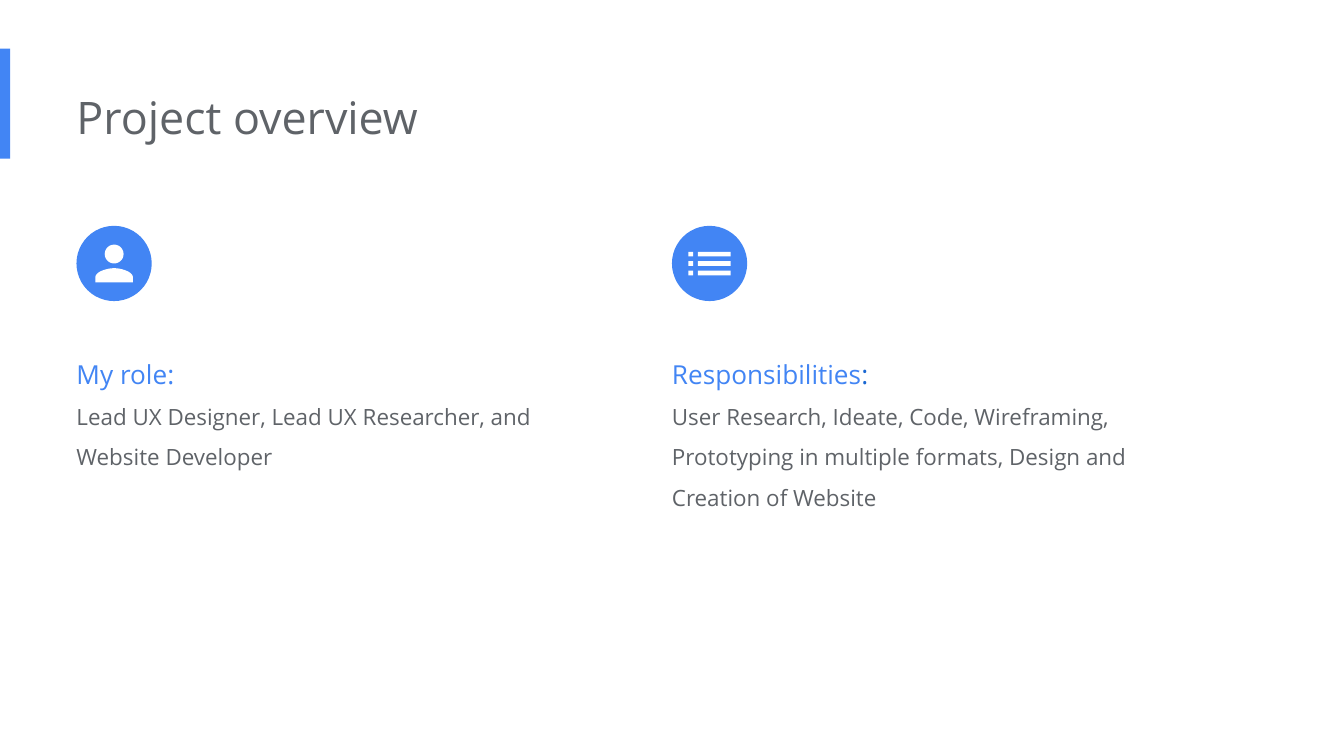
"""Build the project overview slide with a role and a responsibilities column."""
import math
from dataclasses import dataclass

import pptx
import pptx.dml.color
import pptx.enum.shapes
import pptx.enum.text
import pptx.util

Pt = pptx.util.Pt
Color = pptx.dml.color.RGBColor
Kind = pptx.enum.shapes.MSO_SHAPE
Path = list[tuple[float, float]]

BLUE = Color(0x42, 0x85, 0xF4)
NAVY = Color(0x19, 0x67, 0xD2)
GRAY = Color(0x5F, 0x63, 0x68)
WHITE = Color(0xFF, 0xFF, 0xFF)
FONT = "Open Sans"
LEFT, RIGHT = 41, 360
DISC, UNIT = 40.32, 1.26
DISC_TOP, BODY_TOP = 121, 176.4


@dataclass
class Span:
    text: str
    size: float
    color: Color


@dataclass
class Column:
    left: float
    high: float
    head: list[Span]
    body: Span
    icon: list[Path]


def paint(shape, color: Color) -> None:
    shape.shadow.inherit = False
    shape.fill.solid()
    shape.fill.fore_color.rgb = color
    shape.line.fill.background()


def add_solid(slide, kind, left: float, top: float, wide: float, high: float) -> None:
    shape = slide.shapes.add_shape(kind, Pt(left), Pt(top), Pt(wide), Pt(high))
    paint(shape, BLUE)


def add_text(slide, left: float, top: float, wide: float, high: float,
             lines: list[list[Span]], space: float = 1.0) -> None:
    box = slide.shapes.add_textbox(Pt(left), Pt(top), Pt(wide), Pt(high))
    frame = box.text_frame
    frame.word_wrap = True
    frame.auto_size = pptx.enum.text.MSO_AUTO_SIZE.SHAPE_TO_FIT_TEXT
    frame.margin_left = 0
    frame.margin_right = frame.margin_top = frame.margin_bottom = Pt(7.2)
    frame.text = "\n".join(line[0].text for line in lines)
    for para, line in zip(frame.paragraphs, lines):
        para.line_spacing = space
        for span in line[1:]:
            para.add_run().text = span.text
        for run, span in zip(para.runs, line):
            run.font.name = FONT
            run.font.size = Pt(span.size)
            run.font.color.rgb = span.color


def add_icon(slide, mid_x: float, mid_y: float, paths: list[Path]) -> None:
    rings = [[(Pt(mid_x + x * UNIT), Pt(mid_y + y * UNIT)) for x, y in path]
             for path in paths]
    pen = slide.shapes.build_freeform(*rings[0][0])
    for index, ring in enumerate(rings):
        if index:
            pen.move_to(*ring[0])
        pen.add_line_segments(ring[1:], close=True)
    paint(pen.convert_to_shape(), WHITE)


def rect(left: float, top: float, wide: float, high: float) -> Path:
    return [(left, top), (left + wide, top),
            (left + wide, top + high), (left, top + high)]


def curve(*knots: tuple[float, float], steps: int = 16) -> Path:
    path = []
    for step in range(steps + 1):
        t = step / steps
        parts = [math.comb(3, k) * t ** k * (1 - t) ** (3 - k) for k in range(4)]
        path.append((sum(p * x for p, (x, _) in zip(parts, knots)),
                     sum(p * y for p, (_, y) in zip(parts, knots))))
    return path


def person() -> list[Path]:
    turns = [math.tau * step / 48 for step in range(48)]
    head = [(4 * math.cos(turn), -4 + 4 * math.sin(turn)) for turn in turns]
    half = curve((0, 2), (-2.67, 2), (-8, 3.34), (-8, 6)) + [(-8, 8)]
    return [head, half + [(-x, y) for x, y in reversed(half[1:])]]


def bullets() -> list[Path]:
    return [rect(left, top, wide, 2)
            for top in (-5, -1, 3) for left, wide in ((-9, 2), (-5, 14))]


def add_column(slide, col: Column) -> None:
    add_solid(slide, Kind.OVAL, col.left, DISC_TOP, DISC, DISC)
    add_icon(slide, col.left + DISC / 2, DISC_TOP + DISC / 2, col.icon)
    add_text(slide, col.left, BODY_TOP, 271.4, col.high, [col.head, [col.body]], 1.5)


def main() -> None:
    deck = pptx.Presentation()
    deck.slide_width, deck.slide_height = Pt(720), Pt(405)
    slide = deck.slides.add_slide(deck.slide_layouts[6])
    add_solid(slide, Kind.RECTANGLE, 0, 26, 5.5, 59)
    add_text(slide, LEFT, 41, 484.6, 44, [[Span("Project overview", 24, GRAY)]])
    cols = [
        Column(LEFT, 76.3, [Span("My role:", 14, BLUE)],
               Span("Lead UX Designer, Lead UX Researcher, and Website Developer",
                    12, GRAY), person()),
        Column(RIGHT, 97.9, [Span("Responsibilities", 14, BLUE), Span(":", 14, NAVY)],
               Span("User Research, Ideate, Code, Wireframing, Prototyping in "
                    "multiple formats, Design and Creation of Website",
                    12, GRAY), bullets()),
    ]
    for col in cols:
        add_column(slide, col)
    deck.save("out.pptx")


if __name__ == "__main__":
    main()
